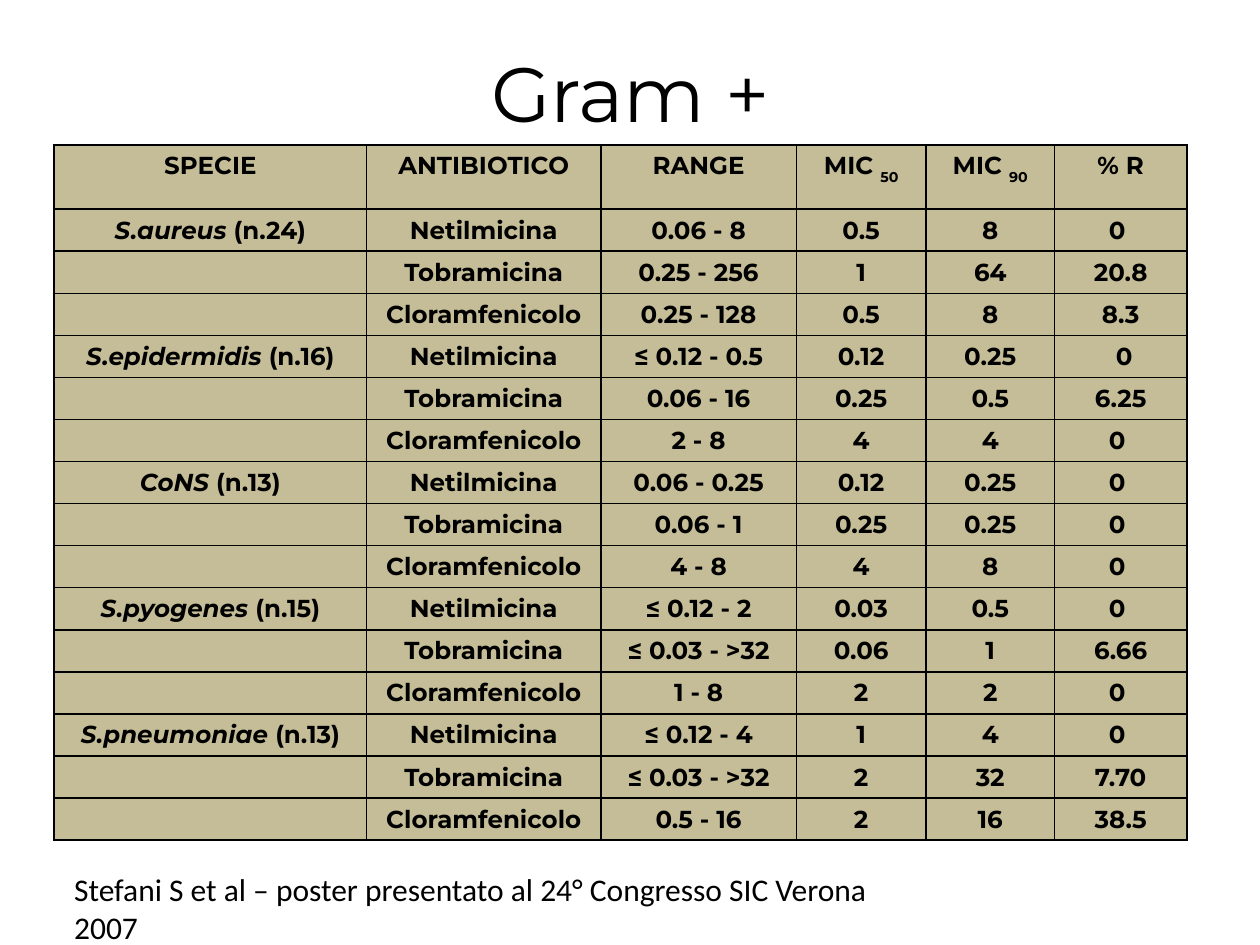
import pptx
import pptx.dml.color
import pptx.enum.text
import pptx.oxml
import pptx.oxml.ns
import pptx.util

Inches = pptx.util.Inches
Pt = pptx.util.Pt
ALIGN = pptx.enum.text.PP_ALIGN
BLACK = pptx.dml.color.RGBColor(0x00, 0x00, 0x00)
KHAKI = pptx.dml.color.RGBColor(0xC4, 0xBD, 0x97)

HEADERS = ["SPECIE", "ANTIBIOTICO", "RANGE", "MIC ", "MIC ", "% R"]
SUBSCRIPTS = {3: "50", 4: "90"}
COL_WIDTHS = [2.48, 1.86, 1.55, 1.03, 1.02, 1.05]
ROW_HEIGHTS = [0.51] + [0.31] * 14 + [0.2]
DRUGS = ["Netilmicina", "Tobramicina", "Cloramfenicolo"]

# For each species: range, MIC 50, MIC 90 and % R, one row per drug
SPECIES = [
    ("S.aureus", 24, [("0.06 - 8", "0.5", "8", "0 "),
                      ("0.25 - 256", "1", "64", "20.8"),
                      ("0.25 - 128", "0.5", "8", "8.3")]),
    ("S.epidermidis", 16, [("≤ 0.12 - 0.5", "0.12", "0.25", " 0"),
                           ("0.06 - 16", "0.25", "0.5", "6.25"),
                           ("2 - 8", "4", "4", "0 ")]),
    ("CoNS", 13, [("0.06 - 0.25", "0.12", "0.25", "0 "),
                  ("0.06 - 1", "0.25", "0.25", "0 "),
                  ("4 - 8", "4", "8", "0 ")]),
    ("S.pyogenes", 15, [("≤ 0.12 - 2", "0.03", "0.5", "0 "),
                        ("≤ 0.03 - >32", "0.06", "1", "6.66"),
                        ("1 - 8", "2", "2", "0 ")]),
    ("S.pneumoniae", 13, [("≤ 0.12 - 4", "1", "4", "0 "),
                          ("≤ 0.03 - >32", "2", "32", "7.70"),
                          ("0.5 - 16", "2", "16", "38.5")]),
]


def add_run(p, text, size, name, **formats):
    r = p.add_run()
    r.text = text
    r.font.color.rgb = BLACK
    for key, value in {"size": Pt(size), "name": name, **formats}.items():
        setattr(r.font, key, value)
    return r


def style_cell(cell):
    """Fill the cell, draw its four borders and centre its text."""
    cell.fill.solid()
    cell.fill.fore_color.rgb = KHAKI
    tc_pr = cell._tc.get_or_add_tcPr()
    for i, side in enumerate(("lnL", "lnR", "lnT", "lnB")):
        tc_pr.insert(i, pptx.oxml.parse_xml(
            f'<a:{side} {pptx.oxml.ns.nsdecls("a")} w="{Pt(1)}">'
            f'<a:solidFill><a:srgbClr val="{BLACK}"/></a:solidFill></a:{side}>'))
    p = cell.text_frame.paragraphs[0]
    p.alignment = ALIGN.CENTER
    return p


prs = pptx.Presentation()
prs.slide_width, prs.slide_height = Inches(10), Inches(7.5)
s = prs.slides.add_slide(prs.slide_layouts[6])

# Title
tf = s.shapes.add_textbox(Inches(0.51), Inches(0.3), Inches(8.99), Inches(0.85)).text_frame
tf.word_wrap = True
tf.vertical_anchor = pptx.enum.text.MSO_ANCHOR.MIDDLE
p = tf.paragraphs[0]
p.alignment = ALIGN.CENTER
add_run(p, "Gram +", 44, "Montserrat")

# Table contents: each cell is a list of (text, formats) runs
rows = [[[(text, {})] for text in HEADERS]]
for col, text in SUBSCRIPTS.items():
    rows[0][col].append((text, {"subscript": True}))
for species, count, results in SPECIES:
    label = [(species, {"italic": True}), (f" (n.{count})", {})]
    for drug, values in zip(DRUGS, results):
        rows.append([label] + [[(text, {})] for text in (drug, *values)])
        label = []

# Table
table = s.shapes.add_table(len(rows), len(HEADERS), Inches(0.43), Inches(1.15),
                           Inches(9), Inches(5.51)).table
for column, width in zip(table.columns, COL_WIDTHS):
    column.width = Inches(width)
for row, height in zip(table.rows, ROW_HEIGHTS):
    row.height = Inches(height)
for i, row in enumerate(rows):
    for j, runs in enumerate(row):
        p = style_cell(table.cell(i, j))
        for text, formats in runs:
            r = add_run(p, text, 14, "Montserrat", bold=True,
                        italic=formats.get("italic", False))
            if formats.get("subscript"):
                r.font._element.set("baseline", "-30000")
        if not runs:  # an empty cell keeps the text size of its row
            p._p.append(pptx.oxml.parse_xml(
                f'<a:endParaRPr {pptx.oxml.ns.nsdecls("a")} sz="1400" b="1">'
                '<a:latin typeface="Montserrat"/></a:endParaRPr>'))

# Source note
tf = s.shapes.add_textbox(Inches(0.49), Inches(6.86), Inches(6.88), Inches(0.4)).text_frame
tf.word_wrap = True
add_run(tf.paragraphs[0],
        "Stefani S et al – poster presentato al 24° Congresso SIC Verona 2007",
        18, "Calibri")

prs.save("out.pptx")
